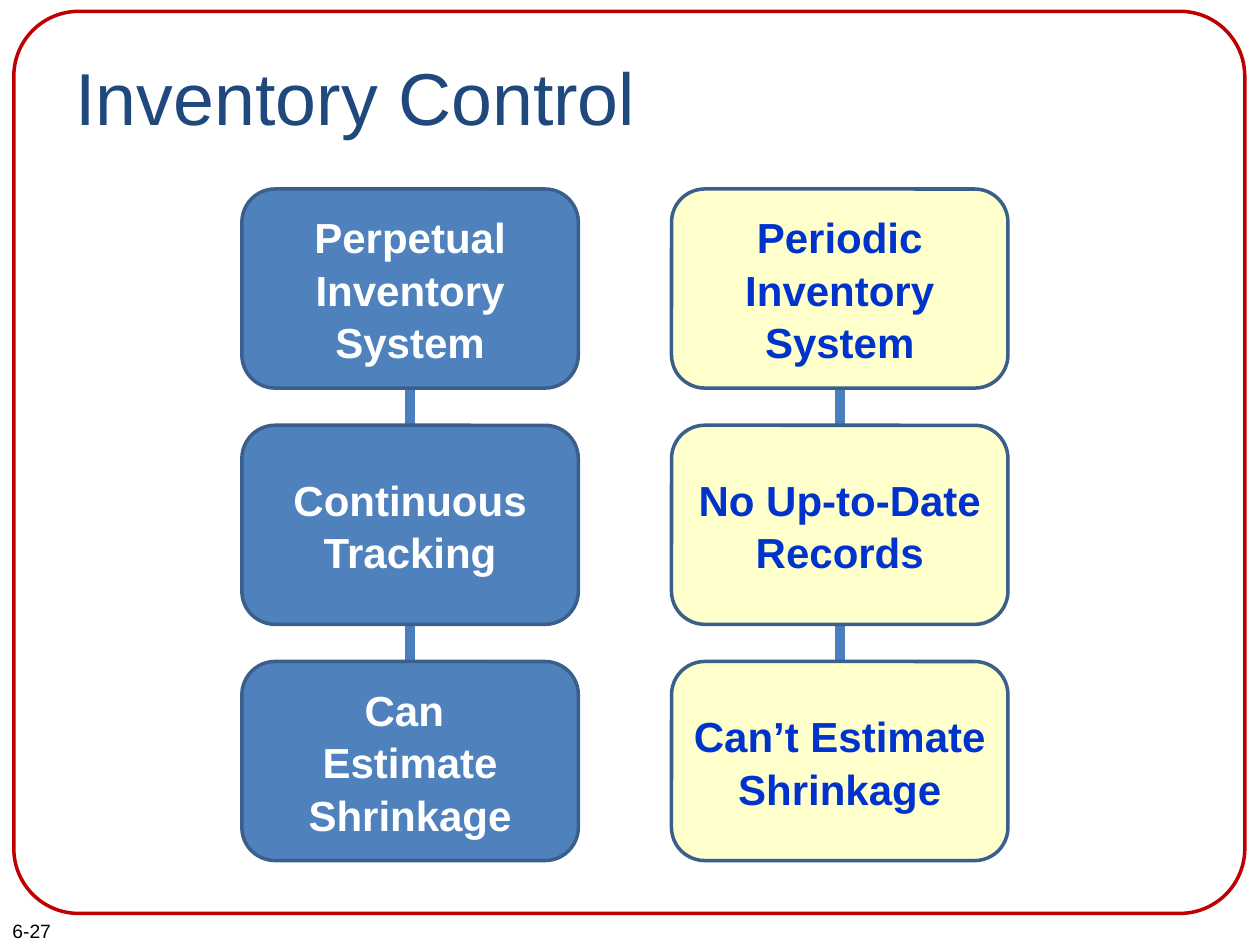
from pptx import Presentation
from pptx.dml.color import RGBColor
from pptx.enum import shapes, text
from pptx.oxml.ns import qn
from pptx.util import Inches, Pt
from lxml import etree


def color(value):
    return RGBColor.from_string(value)


class SlideBuilder:
    font = "Arial"
    border = "3A5F8C"
    link = "4B7EBC"

    def __init__(self, page):
        self.page = page

    def style(self, para, size, hue, bold=False):
        para.font.name = self.font
        para.font.size = Pt(size)
        para.font.bold = bold
        para.font.color.rgb = color(hue)

    def title(self, words, left, top, width, height):
        title = self.page.shapes.title
        title.left, title.top = Inches(left), Inches(top)
        title.width, title.height = Inches(width), Inches(height)
        frame = title.text_frame
        frame.text = words
        frame.vertical_anchor = text.MSO_ANCHOR.TOP
        frame.margin_top = Inches(0.11)
        para = frame.paragraphs[0]
        para.alignment = text.PP_ALIGN.LEFT
        self.style(para, 42, "1F497D")

    def label(self, words, left, top, width, height):
        box = self.page.shapes.add_textbox(
            Inches(left), Inches(top), Inches(width), Inches(height))
        box.text_frame.word_wrap = True
        box.text_frame.text = words
        self.style(box.text_frame.paragraphs[0], 11, "000000")

    def rounded(self, left, top, width, height, line, fill=None):
        box = self.page.shapes.add_shape(
            shapes.MSO_SHAPE.ROUNDED_RECTANGLE,
            Inches(left), Inches(top), Inches(width), Inches(height))
        box.shadow.inherit = False
        box.line.color.rgb = color(line)
        box.line.width = Pt(2)
        if fill:
            box.fill.solid()
            box.fill.fore_color.rgb = color(fill)
        else:
            box.fill.background()
        return box

    def card(self, words, left, top, width, height, fill, ink):
        box = self.rounded(left, top, width, height, self.border, fill)
        frame = box.text_frame
        frame.word_wrap = True
        frame.vertical_anchor = text.MSO_ANCHOR.MIDDLE
        frame.text = words
        para = frame.paragraphs[0]
        para.alignment = text.PP_ALIGN.CENTER
        para.line_spacing = 1.04
        self.style(para, 24, ink, bold=True)

    def spine(self, x, top, bottom):
        line = self.page.shapes.add_connector(
            shapes.MSO_CONNECTOR.STRAIGHT,
            Inches(x), Inches(top), Inches(x), Inches(bottom))
        line.line.color.rgb = color(self.link)
        line.line.width = Pt(6)
        etree.SubElement(line._element.spPr, qn("a:effectLst"))


def main():
    deck = Presentation()
    deck.slide_width, deck.slide_height = Inches(10), Inches(7.5)
    builder = SlideBuilder(deck.slides.add_slide(deck.slide_layouts[5]))

    builder.label("6-27", 0, 7.25, 1.42, 0.29)
    border = builder.rounded(0.11, 0.09, 9.77, 7.16, "C00000")
    border.adjustments[0] = 0.072
    builder.title("Inventory Control", 0.5, 0.3, 9, 1.25)

    card_width, card_height = 2.67, 1.58
    first_top, row_step = 1.5, 1.875
    systems = [
        (1.92, "4F81BD", "FFFFFF",
         ["Perpetual Inventory System", "Continuous Tracking",
          "Can \vEstimate Shrinkage"]),
        (5.33, "FFFFCC", "0033CC",
         ["Periodic Inventory System", "No Up-to-Date Records",
          "Can’t Estimate Shrinkage"]),
    ]
    for left, fill, ink, features in systems:
        builder.spine(left + card_width / 2, 2.92, 5.33)
        for row, words in enumerate(features):
            builder.card(words, left, first_top + row * row_step,
                         card_width, card_height, fill, ink)

    deck.save("out.pptx")


if __name__ == "__main__":
    main()
